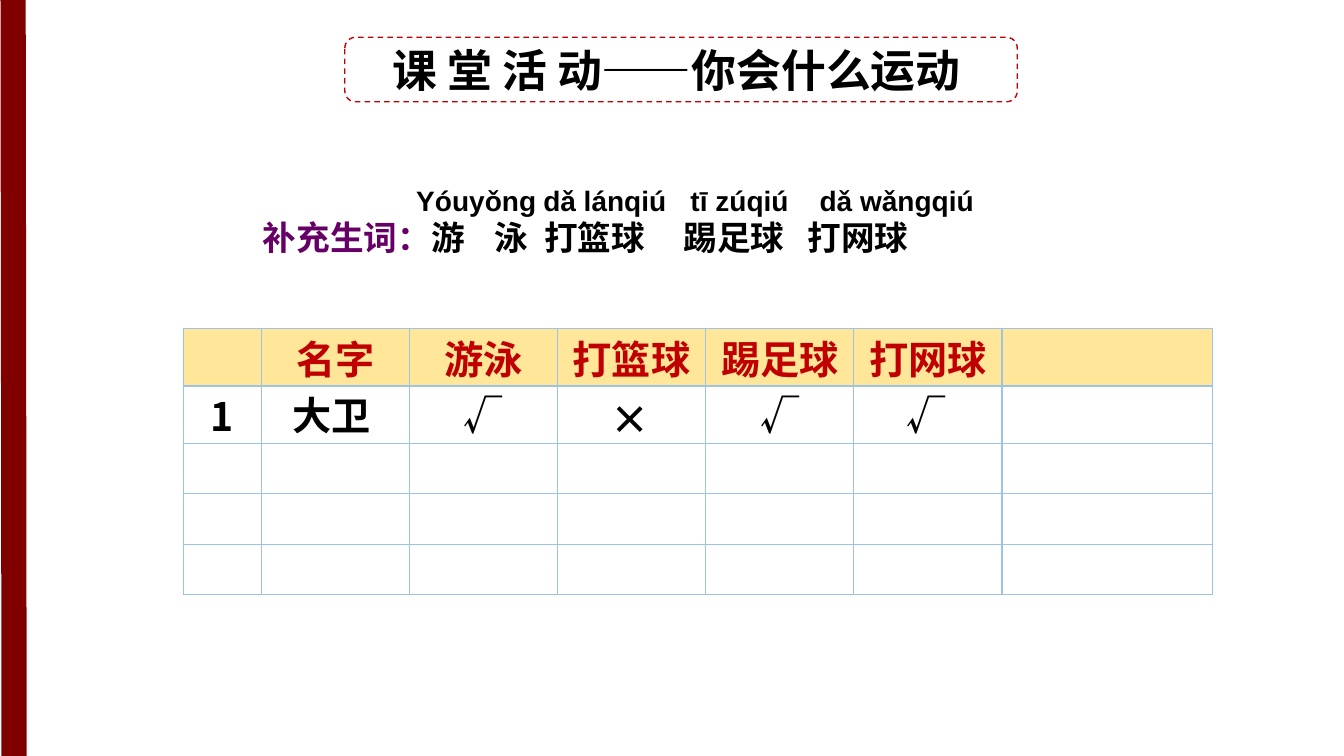
"""Build the classroom activity slide about sports."""
from lxml import etree
from pptx import Presentation
from pptx.dml.color import RGBColor
from pptx.enum import dml, shapes, text
from pptx.oxml import ns
from pptx.util import Inches, Pt

COLORS = {"black": "000000", "red": "C00000", "maroon": "800000",
          "purple": "660066", "gold": "FFE699", "grid": "9DC3E6"}
CJK = "Noto Sans CJK SC"
LATIN = "Arial"
COLUMNS = [0.77] + [1.47] * 5 + [2.09]
ROWS = [0.57, 0.57, 0.5, 0.5, 0.5]
HEADERS = ["名字", "游泳", "打篮球", "踢足球", "打网球"]
ANSWERS = [("大卫", 2.8, 3.83, 0.99), ("√", 4.5, 3.83, 0.6),
           ("×", 5.96, 3.87, 0.6), ("√", 7.44, 3.83, 0.6),
           ("√", 8.89, 3.83, 0.6)]


def rgb(color):
    return RGBColor.from_string(COLORS[color])


def style(font, size, color="black", name=CJK):
    font.size, font.bold, font.name = Pt(size), True, name
    font.color.rgb = rgb(color)


def add_text(page, left, top, width, height, wrap=False):
    box = page.shapes.add_textbox(Inches(left), Inches(top),
                                  Inches(width), Inches(height))
    box.text_frame.word_wrap = wrap
    box.text_frame.auto_size = text.MSO_AUTO_SIZE.SHAPE_TO_FIT_TEXT
    return box.text_frame


def add_label(page, words, left, top, width, height, size):
    para = add_text(page, left, top, width, height).paragraphs[0]
    para.text = words
    style(para.font, size)


def set_tabs(para, stops):
    tabs = etree.SubElement(para._p.get_or_add_pPr(), ns.qn("a:tabLst"))
    for stop in stops:
        etree.SubElement(tabs, ns.qn("a:tab"), pos=str(Inches(stop)), algn="l")


def add_vocabulary(page):
    frame = add_text(page, 2.51, 1.77, 8.09, 0.84, wrap=True)
    pinyin, words = frame.paragraphs[0], frame.add_paragraph()
    set_tabs(pinyin, [1.52, 2.78, 4.24, 5.52])
    set_tabs(words, [1.67, 2.3, 2.79, 4.17, 5.4])
    for para, content, size, color, name in [
            (pinyin, "\tYóuyǒng\tdǎ lánqiú\ttī zúqiú\tdǎ wǎngqiú", 20, "black", LATIN),
            (words, "补充生词：", 24, "purple", CJK),
            (words, "\t游\t泳\t打篮球\t踢足球\t打网球", 24, "black", LATIN)]:
        span = para.add_run()
        span.text = content
        style(span.font, size, color, name)


def add_borders(cell):
    props = cell._tc.get_or_add_tcPr()
    for index, side in enumerate(("lnL", "lnR", "lnT", "lnB")):
        line = etree.Element(ns.qn(f"a:{side}"), w=str(Pt(1)))
        fill = etree.SubElement(line, ns.qn("a:solidFill"))
        etree.SubElement(fill, ns.qn("a:srgbClr"), val=COLORS["grid"])
        props.insert(index, line)


def write_cell(cell, words, color):
    cell.vertical_anchor = text.MSO_ANCHOR.MIDDLE
    para = cell.text_frame.paragraphs[0]
    para.text, para.alignment = words, text.PP_ALIGN.CENTER
    style(para.font, 28, color)


def add_survey(page):
    table = page.shapes.add_table(
        len(ROWS), len(COLUMNS), Inches(1.82), Inches(3.26),
        Inches(sum(COLUMNS)), Inches(sum(ROWS))).table
    for column, width in zip(table.columns, COLUMNS):
        column.width = Inches(width)
    for index, (row, height) in enumerate(zip(table.rows, ROWS)):
        row.height = Inches(height)
        for cell in row.cells:
            cell.margin_top = cell.margin_bottom = 0
            if index == 0:
                cell.fill.solid()
                cell.fill.fore_color.rgb = rgb("gold")
            else:
                cell.fill.background()
            add_borders(cell)
    for column, header in enumerate(HEADERS, 1):
        write_cell(table.cell(0, column), header, "red")
    write_cell(table.cell(1, 0), "1", "black")


def add_title_frame(page):
    frame = page.shapes.add_shape(
        shapes.MSO_SHAPE.ROUNDED_RECTANGLE, Inches(3.42), Inches(0.37),
        Inches(6.67), Inches(0.64))
    frame.shadow.inherit = False
    frame.fill.background()
    frame.line.color.rgb, frame.line.width = rgb("red"), Pt(1)
    frame.line.dash_style = dml.MSO_LINE.DASH


def add_side_bar(page):
    bar = page.shapes.add_connector(
        shapes.MSO_CONNECTOR.STRAIGHT, Inches(0.14), Inches(7.5),
        Inches(0.13), Inches(-0.02))
    bar.line.color.rgb, bar.line.width = rgb("maroon"), Pt(18)
    etree.SubElement(bar._element.spPr, ns.qn("a:effectLst"))


def main():
    deck = Presentation()
    deck.slide_width, deck.slide_height = Inches(13.33), Inches(7.5)
    page = deck.slides.add_slide(deck.slide_layouts[6])
    add_label(page, "课 堂 活 动——你会什么运动", 3.79, 0.37, 6.07, 0.64, 32)
    add_title_frame(page)
    add_side_bar(page)
    add_survey(page)
    for words, left, top, width in ANSWERS:
        add_label(page, words, left, top, width, 0.57, 28)
    add_vocabulary(page)
    deck.save("out.pptx")


if __name__ == "__main__":
    main()
